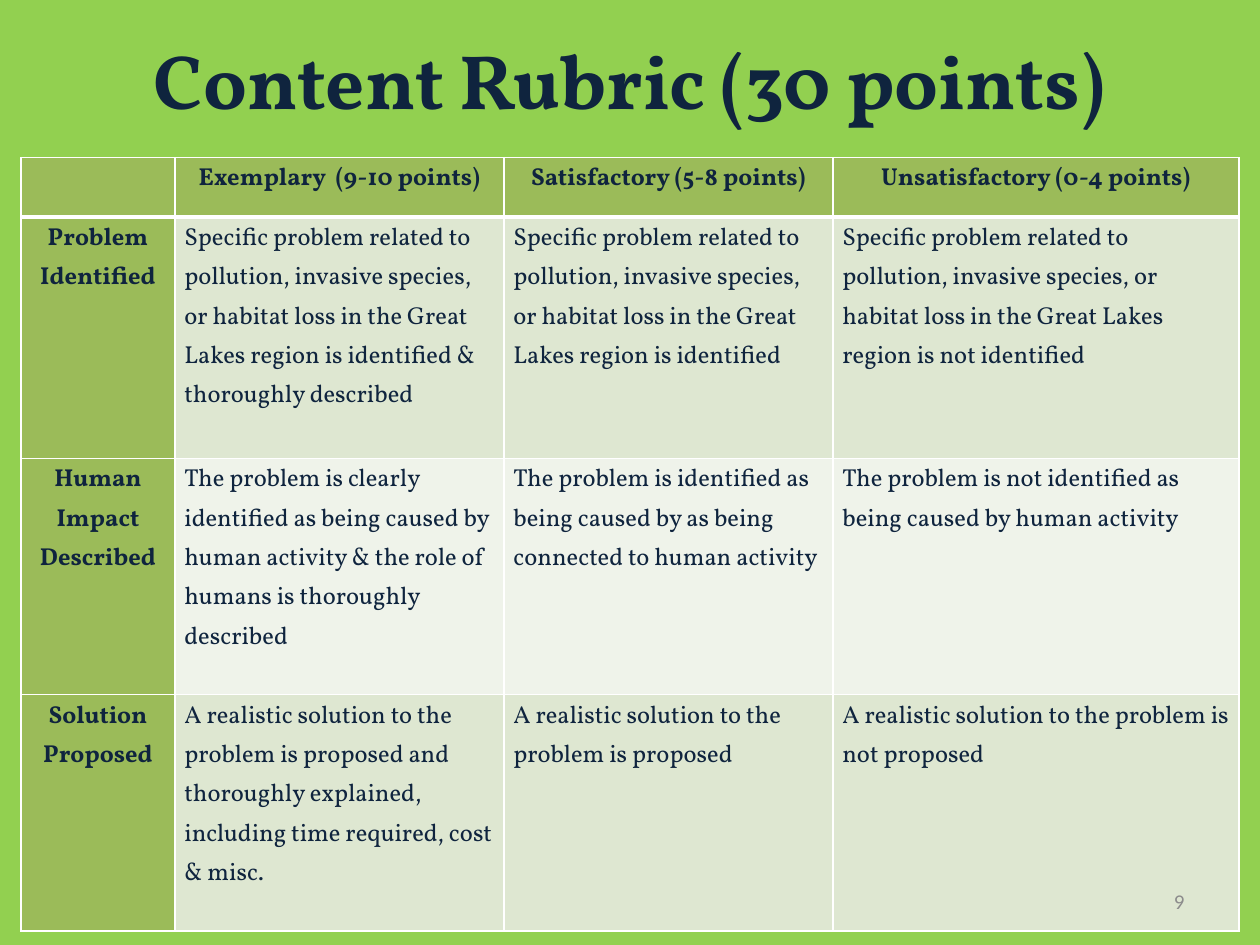
from dataclasses import dataclass

from lxml import etree
from pptx import Presentation
from pptx.dml.color import RGBColor
from pptx.enum.text import MSO_ANCHOR, PP_ALIGN
from pptx.oxml.ns import qn
from pptx.util import Pt

LEFT, CENTER, RIGHT = PP_ALIGN.LEFT, PP_ALIGN.CENTER, PP_ALIGN.RIGHT
MIDDLE = MSO_ANCHOR.MIDDLE


@dataclass(frozen=True)
class Theme:
    background: str = "92D050"
    ink: str = "0F243E"
    heading_fill: str = "9BBB59"
    band_fills: tuple = ("DEE7D1", "EFF3EA")
    border: str = "FFFFFF"
    muted: str = "8C8C8C"
    font: str = "Vollkorn"
    number_font: str = "Calibri"
    title_size: int = 44
    cell_size: int = 14
    number_size: int = 12


theme = Theme()


def write(text_frame, text, size, align, color=theme.ink, font=theme.font, bold=False):
    """Put one formatted paragraph in the frame and return it."""
    text_frame.text = text
    text_frame.word_wrap = True
    paragraph = text_frame.paragraphs[0]
    paragraph.alignment = align
    for run in paragraph.runs:
        run.font.size = Pt(size)
        run.font.name = font
        run.font.bold = bold
        run.font.color.rgb = RGBColor.from_string(color)
    return paragraph


def set_borders(cell, widths):
    """Add solid cell borders; widths are points for left, right, top, bottom."""
    properties = cell._tc.get_or_add_tcPr()
    for index, (tag, width) in enumerate(zip(("a:lnL", "a:lnR", "a:lnT", "a:lnB"), widths)):
        line = etree.Element(qn(tag), w=str(int(Pt(width))))
        fill = etree.SubElement(line, qn("a:solidFill"))
        etree.SubElement(fill, qn("a:srgbClr"), val=theme.border)
        properties.insert(index, line)


presentation = Presentation()
presentation.slide_width = Pt(720)
presentation.slide_height = Pt(540)
slide = presentation.slides.add_slide(presentation.slide_layouts[6])
slide.background.fill.solid()
slide.background.fill.fore_color.rgb = RGBColor.from_string(theme.background)

# Title
title = slide.shapes.add_textbox(Pt(36), Pt(0), Pt(648), Pt(90))
title.text_frame.vertical_anchor = MIDDLE
write(title.text_frame, "Content Rubric (30 points)", theme.title_size, CENTER, bold=True)

# Rubric table
rubric = [
    ["", "Exemplary  (9-10 points)", "Satisfactory (5-8 points)", "Unsatisfactory (0-4 points)"],
    [
        "Problem Identified",
        "Specific problem related to pollution, invasive species, or habitat loss "
        "in the Great Lakes region is identified & thoroughly described",
        "Specific problem related to pollution, invasive species, or habitat loss "
        "in the Great Lakes region is identified",
        "Specific problem related to pollution, invasive species, or habitat loss "
        "in the Great Lakes region is not identified",
    ],
    [
        "Human Impact Described",
        "The problem is clearly identified as being caused by human activity "
        "& the role of humans is thoroughly described",
        "The problem is identified as being caused by as being connected to human activity",
        "The problem is not identified as being caused by human activity",
    ],
    [
        "Solution Proposed",
        "A realistic solution to the problem is proposed and thoroughly explained, "
        "including time required, cost & misc.",
        "A realistic solution to the problem is proposed",
        "A realistic solution to the problem is not proposed",
    ],
]
column_widths = [88, 188, 188, 232]
row_heights = [34, 138, 135, 135]

table = slide.shapes.add_table(
    len(rubric), len(column_widths), Pt(12), Pt(90), Pt(sum(column_widths)), Pt(sum(row_heights))
).table
for column, width in zip(table.columns, column_widths):
    column.width = Pt(width)

for row_index, (texts, height) in enumerate(zip(rubric, row_heights)):
    table.rows[row_index].height = Pt(height)
    for column_index, text in enumerate(texts):
        cell = table.cell(row_index, column_index)
        is_heading = row_index == 0 or column_index == 0
        cell.margin_left = cell.margin_right = Pt(5.4)
        cell.margin_top = cell.margin_bottom = Pt(0)
        paragraph = write(cell.text_frame, text, theme.cell_size,
                          CENTER if is_heading else LEFT, bold=is_heading)
        paragraph.line_spacing = 1.15
        if row_index == 0:
            paragraph.space_before = Pt(2)
        fill = theme.heading_fill if is_heading else theme.band_fills[(row_index - 1) % 2]
        cell.fill.solid()
        cell.fill.fore_color.rgb = RGBColor.from_string(fill)
        set_borders(cell, (1, 1, 3 if row_index == 1 else 1, 3 if row_index == 0 else 1))

# Slide number
number = slide.shapes.add_textbox(Pt(516), Pt(500.5), Pt(168), Pt(28.75))
number.text_frame.vertical_anchor = MIDDLE
write(number.text_frame, "9", theme.number_size, RIGHT, theme.muted, theme.number_font)

presentation.save("out.pptx")
